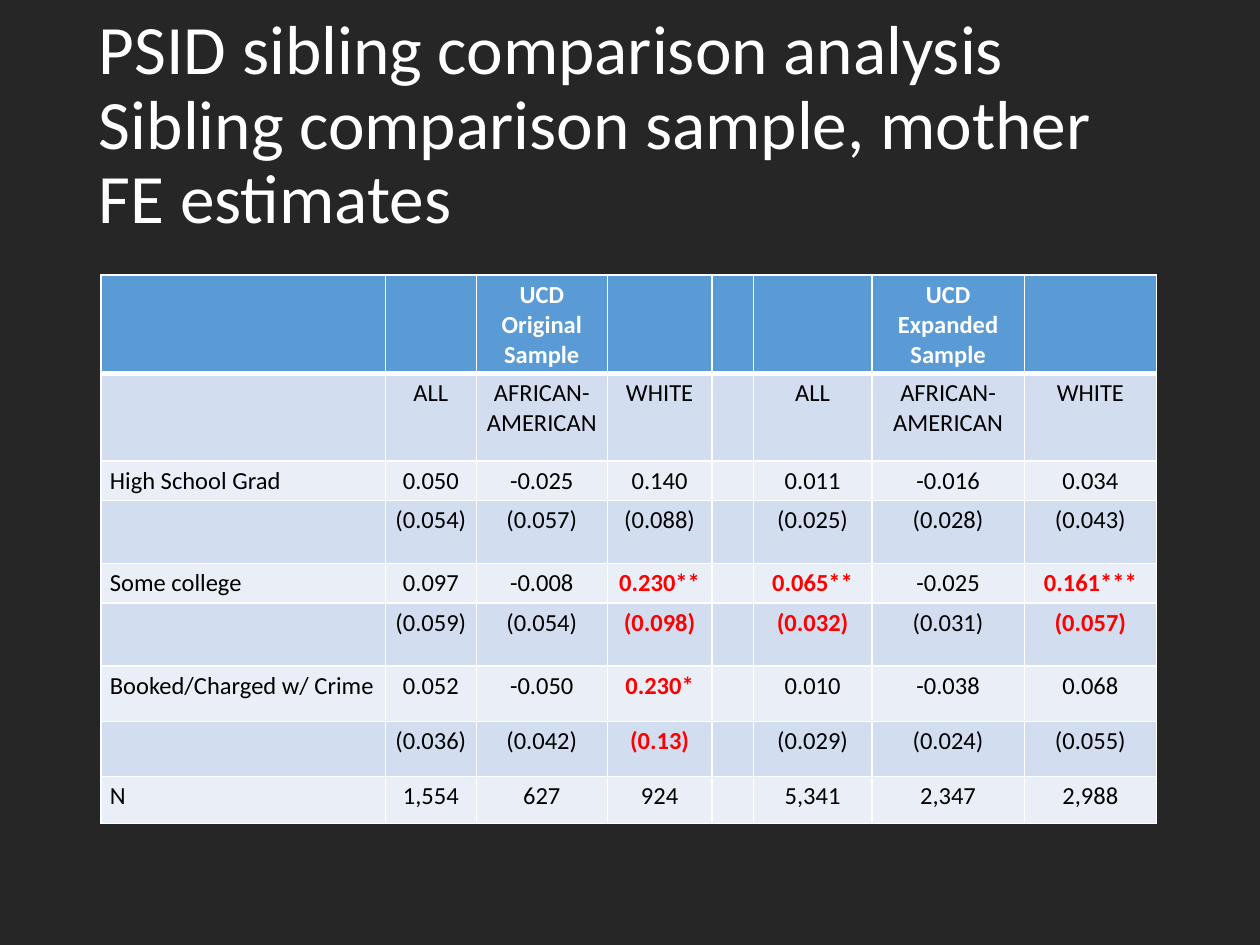
from dataclasses import dataclass

from lxml import etree
from pptx import Presentation
from pptx import util as u
from pptx.dml.color import RGBColor
from pptx.enum import text
from pptx.oxml import ns


@dataclass(frozen=True)
class Theme:
    font: str = "Calibri"
    title_size: float = 39.6
    table_size: float = 14
    background: str = "262626"
    light: str = "FFFFFF"
    dark: str = "000000"
    significant: str = "FF0000"
    header: str = "5B9BD5"
    bands: tuple = ("EAEFF7", "D2DEEF")
    rule: float = 1
    header_rule: float = 3


GROUPS = ["ALL", "AFRICAN-AMERICAN", "WHITE"]
ROWS = [
    ["", "", "UCD Original Sample", "", "", "", "UCD Expanded Sample", ""],
    ["", *GROUPS, "", *GROUPS],
    ["High School Grad", "0.050", "-0.025", "0.140", "", "0.011", "-0.016", "0.034"],
    ["", "(0.054)", "(0.057)", "(0.088)", "", "(0.025)", "(0.028)", "(0.043)"],
    ["Some college", "0.097", "-0.008", "0.230**", "", "0.065**", "-0.025", "0.161***"],
    ["", "(0.059)", "(0.054)", "(0.098)", "", "(0.032)", "(0.031)", "(0.057)"],
    ["Booked/Charged w/ Crime", "0.052", "-0.050", "0.230*", "", "0.010", "-0.038", "0.068"],
    ["", "(0.036)", "(0.042)", "(0.13)", "", "(0.029)", "(0.024)", "(0.055)"],
    ["N", "1,554", "627", "924", "", "5,341", "2,347", "2,988"],
]
COLUMN_WIDTHS = [162.7, 51.9, 74.9, 59.8, 23.7, 67.7, 87.1, 75.6]
ROW_HEIGHTS = [54, 50, 21.6, 36, 21.6, 36, 31.5, 31.5, 26.8]


class Deck:
    def __init__(self, theme):
        self.theme = theme
        self.file = Presentation()
        self.file.slide_width, self.file.slide_height = u.Pt(720), u.Pt(540)
        self.slide = self.file.slides.add_slide(self.file.slide_layouts[6])
        self.fill(self.slide.background, theme.background)

    def fill(self, target, color):
        target.fill.solid()
        target.fill.fore_color.rgb = RGBColor.from_string(color)

    def style(self, font, color, **values):
        for name, value in {"name": self.theme.font, **values}.items():
            setattr(font, name, value)
        font.color.rgb = RGBColor.from_string(color)

    def title(self, wording, left, top, width, height):
        """Add the heading; a vertical tab in the wording breaks the line."""
        frame = self.slide.shapes.add_textbox(*map(u.Pt, (left, top, width, height))).text_frame
        frame.word_wrap = True
        frame.vertical_anchor = text.MSO_ANCHOR.MIDDLE
        heading = frame.paragraphs[0]
        heading.text = wording
        heading.line_spacing = 0.9
        for run in heading.runs:
            self.style(run.font, self.theme.light, size=u.Pt(self.theme.title_size))

    def borders(self, cell, **widths):
        properties = cell._tc.get_or_add_tcPr()
        for side in "LRTB":
            width = widths.get(side, self.theme.rule)
            line = etree.SubElement(properties, ns.qn(f"a:ln{side}"), w=str(u.Pt(width)))
            paint = etree.SubElement(line, ns.qn("a:solidFill"))
            etree.SubElement(paint, ns.qn("a:srgbClr"), val=self.theme.light)

    def cell_text(self, cell, wording, color, bold, centred):
        margins = {"margin_left": 5.2, "margin_right": 5.2, "margin_top": 2.9, "margin_bottom": 2.9}
        for name, value in margins.items():
            setattr(cell, name, u.Pt(value))
        line = cell.text_frame.paragraphs[0]
        size = self.theme.table_size
        if not wording:
            # the end mark keeps an empty cell from stretching its row
            etree.SubElement(line._p, ns.qn("a:endParaRPr"), sz=str(int(size * 100)))
            return
        line.alignment = text.PP_ALIGN.CENTER if centred else text.PP_ALIGN.LEFT
        run = line.add_run()
        run.text = wording
        self.style(run.font, color, size=u.Pt(size), bold=bold)

    def table(self, rows, left, top, widths, heights):
        """Add the estimates; starred ones and the errors below them stand out."""
        theme = self.theme
        box = map(u.Pt, (left, top, sum(widths), sum(heights)))
        grid = self.slide.shapes.add_table(len(rows), len(widths), *box).table
        for column, width in zip(grid.columns, widths):
            column.width = u.Pt(width)
        for r, (row, height) in enumerate(zip(rows, heights)):
            grid.rows[r].height = u.Pt(height)
            header = r == 0
            for c, wording in enumerate(row):
                cell = grid.cell(r, c)
                starred = "*" in wording or (not header and "*" in rows[r - 1][c])
                color = theme.light if header else theme.significant if starred else theme.dark
                self.cell_text(cell, wording, color, header or starred, c > 0)
                edge = {0: {"B": theme.header_rule}, 1: {"T": theme.header_rule}}
                self.borders(cell, **edge.get(r, {}))
                self.fill(cell, theme.header if header else theme.bands[r % 2])


def main():
    deck = Deck(Theme())
    deck.title(
        "PSID sibling comparison analysis\vSibling comparison sample, mother FE estimates",
        49.5, 0, 621, 144.7,
    )
    deck.table(ROWS, 57.6, 157.2, COLUMN_WIDTHS, ROW_HEIGHTS)
    deck.file.save("out.pptx")


if __name__ == "__main__":
    main()
